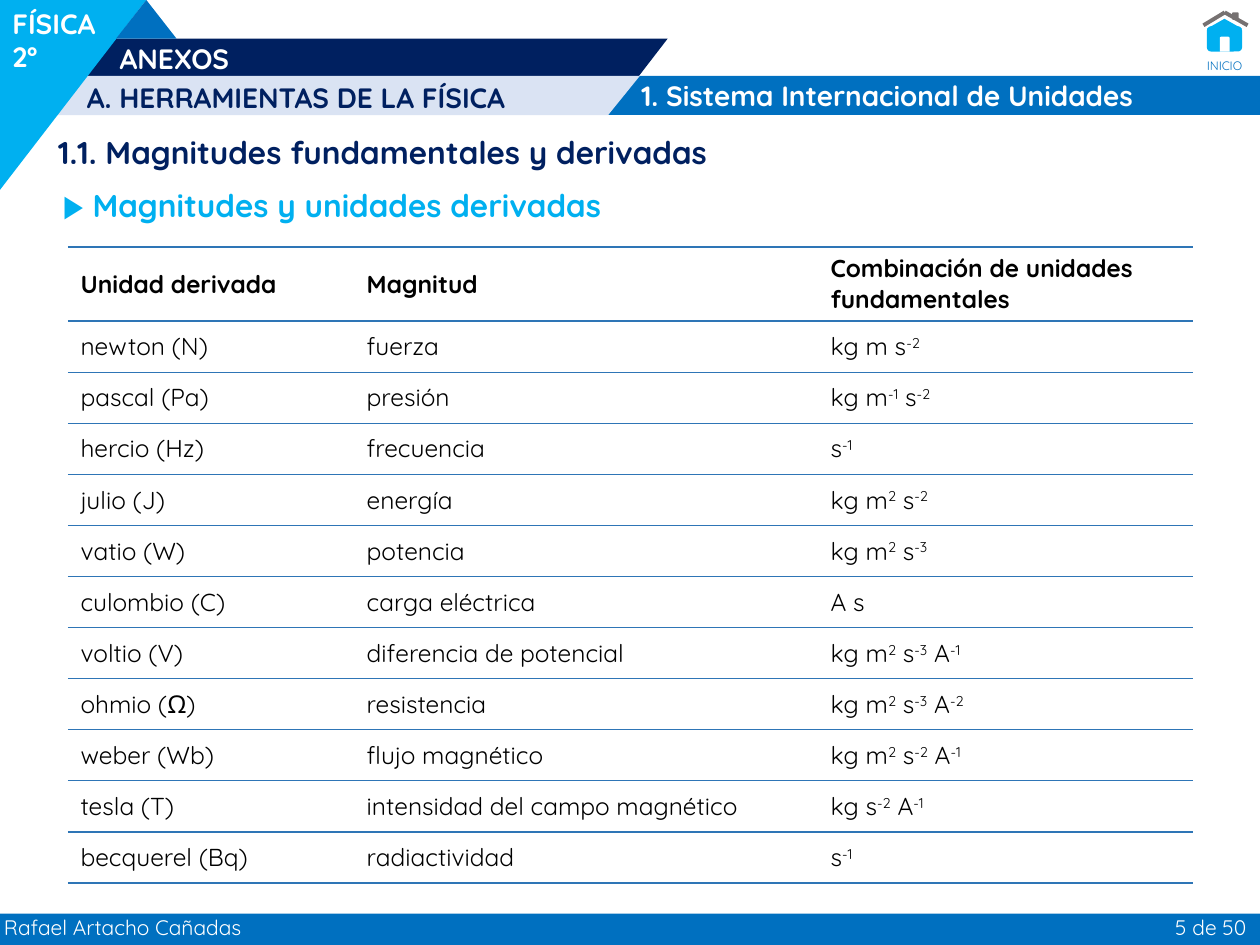
"""Build the slide with the table of derived units of the International System."""
from lxml import etree
from pptx import Presentation
from pptx.dml.color import RGBColor
from pptx.enum.shapes import MSO_CONNECTOR, MSO_SHAPE
from pptx.enum.text import MSO_ANCHOR, MSO_AUTO_SIZE, PP_ALIGN
from pptx.oxml.ns import qn
from pptx.util import Cm, Pt

LEFT, RIGHT = PP_ALIGN.LEFT, PP_ALIGN.RIGHT
TOP, MIDDLE = MSO_ANCHOR.TOP, MSO_ANCHOR.MIDDLE
NO_FIT = MSO_AUTO_SIZE.NONE
STRAIGHT = MSO_CONNECTOR.STRAIGHT
RECTANGLE = MSO_SHAPE.RECTANGLE
ROUNDED = MSO_SHAPE.ROUNDED_RECTANGLE
DOOR = MSO_SHAPE.ROUND_2_SAME_RECTANGLE
SLANTED = MSO_SHAPE.PARALLELOGRAM
TRIANGLE = MSO_SHAPE.ISOSCELES_TRIANGLE
CORNER = MSO_SHAPE.RIGHT_TRIANGLE

FONT = "Quicksand"
PLAIN_TABLE = "{2D5ABB26-0587-4C30-8999-92F81FD0307C}"
COLOURS = {
    "blue": "0070C0", "navy": "002060", "pale": "DAE3F3", "cyan": "00B0F0",
    "white": "FFFFFF", "grey": "767171", "black": "000000", "rule": "2E75B6",
}

HEADINGS = ("Unidad derivada", "Magnitud", "Combinación de unidades fundamentales")
UNITS = [
    ("newton (N)", "fuerza", "kg m s|-2"),
    ("pascal (Pa)", "presión", "kg m|-1| s|-2"),
    ("hercio (Hz)", "frecuencia", "s|-1"),
    ("julio (J)", "energía", "kg m|2| s|-2"),
    ("vatio (W)", "potencia", "kg m|2| s|-3"),
    ("culombio (C)", "carga eléctrica", "A s"),
    ("voltio (V)", "diferencia de potencial", "kg m|2| s|-3| A|-1"),
    ("ohmio (Ω)", "resistencia", "kg m|2| s|-3| A|-2"),
    ("weber (Wb)", "flujo magnético", "kg m|2| s|-2| A|-1"),
    ("tesla (T)", "intensidad del campo magnético", "kg s|-2| A|-1"),
    ("becquerel (Bq)", "radiactividad", "s|-1"),
]


def colour(name):
    """Return the named colour."""
    return RGBColor.from_string(COLOURS[name])


class SlideBuilder:
    """Hold the style and the current slide."""

    def __init__(self, page):
        """Start on the given page."""
        self.page = page

    def fill_paragraph(self, para, text, size, shade, bold=False, align=LEFT):
        """Fill a paragraph; every second part between bars is superscript."""
        for index, part in enumerate(text.split("|")):
            span = para.add_run()
            span.text = part
            if index % 2:
                span.font._element.set("baseline", "30000")
        para.alignment = align
        para.font.name = FONT
        para.font.size = Pt(size)
        para.font.bold = bold
        para.font.color.rgb = colour(shade)

    def fill_frame(self, frame, text, size, shade, bold, align, wrap=True):
        """Put one line into a text frame without margins."""
        frame.margin_left = frame.margin_right = 0
        frame.margin_top = frame.margin_bottom = 0
        frame.auto_size = NO_FIT
        frame.word_wrap = wrap
        frame.vertical_anchor = TOP
        self.fill_paragraph(frame.paragraphs[0], text, size, shade, bold, align)

    def title(self, text, area, size, shade):
        """Place and fill the title placeholder."""
        holder = self.page.shapes.title
        holder.left, holder.top, holder.width, holder.height = map(Cm, area)
        self.fill_frame(holder.text_frame, text, size, shade, True, LEFT)

    def label(self, text, area, size, shade, bold=True, align=LEFT, wrap=True):
        """Add a text box."""
        box = self.page.shapes.add_textbox(*map(Cm, area))
        self.fill_frame(box.text_frame, text, size, shade, bold, align, wrap)

    def shape(self, kind, area, shade, slant=None, flipped=False):
        """Add a flat preset shape."""
        figure = self.page.shapes.add_shape(kind, *map(Cm, area))
        figure.shadow.inherit = False
        figure.fill.solid()
        figure.fill.fore_color.rgb = colour(shade)
        figure.line.fill.background()
        if slant is not None:
            figure.adjustments[0] = slant
        if flipped:
            figure.element.spPr.xfrm.set("flipV", "1")

    def line(self, ends, shade, width):
        """Add a straight line."""
        stroke = self.page.shapes.add_connector(STRAIGHT, *map(Cm, ends))
        stroke.line.color.rgb = colour(shade)
        stroke.line.width = Pt(width)
        etree.SubElement(stroke.element.spPr, qn("a:effectLst"))

    def border(self, cell, side, width):
        """Draw one horizontal edge of a table cell."""
        properties = cell._tc.get_or_add_tcPr()
        edge = etree.SubElement(properties, qn(f"a:{side}"), w=str(int(Pt(width))))
        fill = etree.SubElement(edge, qn("a:solidFill"))
        etree.SubElement(fill, qn("a:srgbClr"), val=COLOURS["rule"])

    def table(self, rows, corner, widths, heights):
        """Add a table with horizontal rules and a bold first row."""
        area = (*corner, sum(widths), sum(heights))
        frame = self.page.shapes.add_table(len(rows), len(widths), *map(Cm, area))
        grid = frame.table
        grid.first_row = grid.horz_banding = False
        grid._tbl.tblPr.find(qn("a:tableStyleId")).text = PLAIN_TABLE
        for column, width in zip(grid.columns, widths):
            column.width = Cm(width)
        last = len(rows) - 1
        for number, (values, height) in enumerate(zip(rows, heights)):
            grid.rows[number].height = Cm(height)
            for cell, text in zip(grid.rows[number].cells, values):
                self.border(cell, "lnT", 1.5 if number < 2 else 0.75)
                self.border(cell, "lnB", 1.5 if number in (0, last) else 0.75)
                cell.fill.background()
                cell.vertical_anchor = MIDDLE
                para = cell.text_frame.paragraphs[0]
                self.fill_paragraph(para, text, 14, "black", number == 0)

    def header(self):
        """Draw the bands and labels at the top."""
        self.shape(RECTANGLE, (12.17, 1.53, 13.23, 0.79), "blue")
        self.shape(SLANTED, (1.52, 0.78, 11.94, 0.75), "navy", 0.77)
        self.shape(SLANTED, (0.91, 1.53, 11.99, 0.79), "pale", 0.81)
        self.shape(CORNER, (0, 0, 2.95, 3.83), "cyan", flipped=True)
        self.shape(TRIANGLE, (2.34, 0, 1.22, 0.78), "blue")
        self.label("FÍSICA", (0.25, 0.13, 1.9, 0.7), 16, "white")
        self.label("2º", (0.25, 0.79, 0.7, 0.7), 16, "white")
        self.label("ANEXOS", (2.41, 0.84, 11.05, 0.69), 16, "white")
        self.label("A. HERRAMIENTAS DE LA FÍSICA", (1.75, 1.63, 9.8, 0.69), 16, "navy")
        self.label("1. Sistema Internacional de Unidades",
                   (12.93, 1.58, 11.13, 0.69), 16, "white")

    def home(self):
        """Draw the house with its caption."""
        self.shape(ROUNDED, (24.33, 0.53, 0.71, 0.51), "cyan")
        self.shape(TRIANGLE, (24.33, 0.38, 0.71, 0.2), "cyan")
        self.shape(DOOR, (24.59, 0.74, 0.2, 0.3), "white")
        for eave in (24.26, 25.15):
            self.line((eave, 0.51, 24.69, 0.25), "grey", 2.25)
        self.shape(ROUNDED, (24.84, 0.25, 0.13, 0.15), "grey")
        self.label("INICIO", (24.33, 1.18, 0.74, 0.31), 7, "blue", False, wrap=False)

    def footer(self):
        """Draw the band with author and page number."""
        self.shape(RECTANGLE, (0, 18.42, 25.4, 0.63), "blue")
        self.label("Rafael Artacho Cañadas", (0.08, 18.44, 6.2, 0.51), 12, "white", False)
        self.label("5 de 50", (22.56, 18.44, 2.57, 0.51), 12, "white", False, RIGHT)


def main():
    """Build and save the deck."""
    deck = Presentation()
    deck.slide_width, deck.slide_height = Cm(25.4), Cm(19.05)
    builder = SlideBuilder(deck.slides.add_slide(deck.slide_layouts[5]))
    builder.header()
    builder.home()
    builder.footer()
    builder.title("1.1. Magnitudes fundamentales y derivadas",
                  (1.17, 2.69, 17.7, 0.76), 18, "navy")
    builder.label("▶ Magnitudes y unidades derivadas", (1.27, 3.76, 12.5, 0.76), 18, "cyan")
    builder.table([HEADINGS, *UNITS], (1.37, 4.98), (5.77, 9.35, 7.57),
                  [1.45] + [1.03] * len(UNITS))
    deck.save("out.pptx")


if __name__ == "__main__":
    main()
